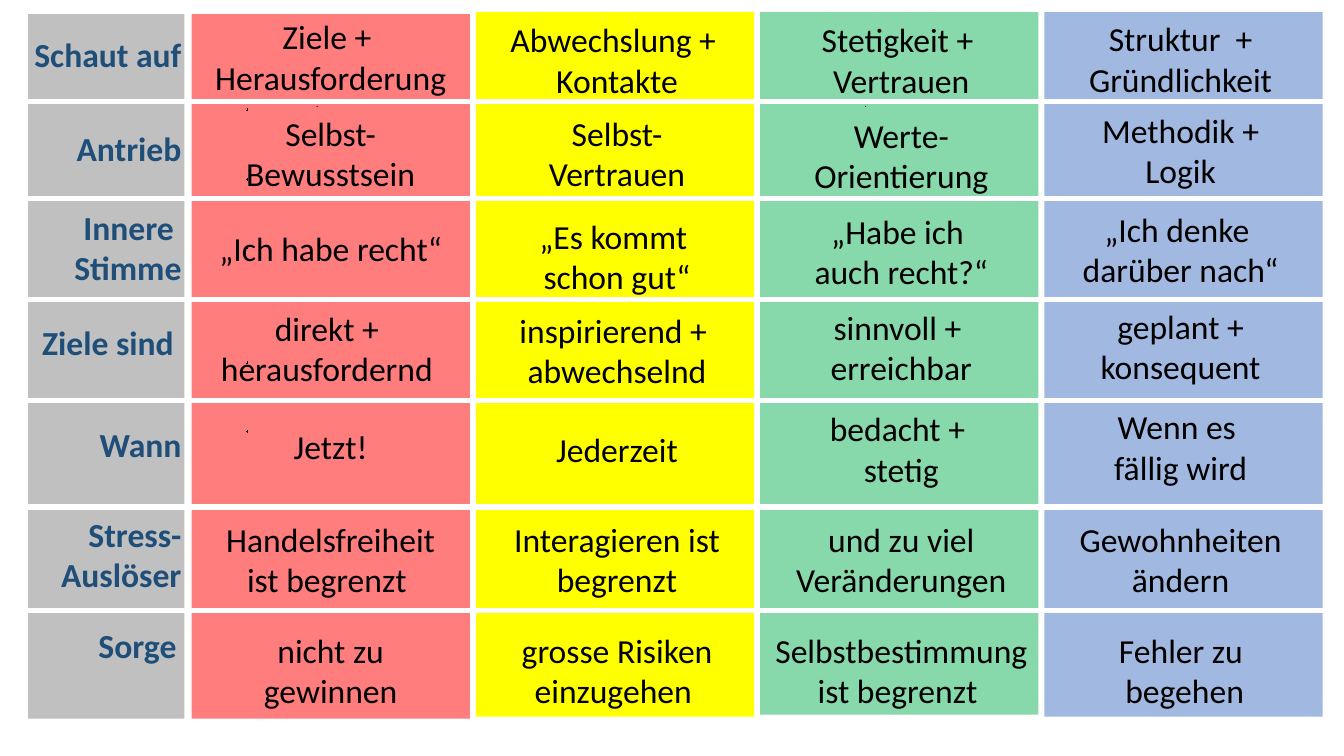
from lxml import etree
from pptx import Presentation
from pptx import util as u
from pptx.dml.color import RGBColor
from pptx.enum import shapes, text
from pptx.oxml.ns import qn

HUE = {"head": "C0C0C0", "red": "FF0000", "gold": "FFFF00", "green": "00B050",
       "blue": "4472C4", "ink": "000000", "navy": "1F4E79", "rule": "FFFFFF"}
LEFT, STEP, WIDE = 1.9, 2.82, 2.76
EDGE = 1.8
LINE = 0.4
COLS = [("red", 51, 0.14, 6.99), ("gold", None, 0.12, 6.99),
        ("green", 47, 0.12, 6.97), ("blue", 50, 0.12, 6.99)]
SPAN = [2.56, 2.72, 2.56, 2.76]
MID = [3.28, 6.12, 8.94, 11.71]
TOPS = [0.12, 1.01, 1.97, 2.97, 3.97, 5.03, 6.06]
RULES = [0.16, 0.2, 0.24, 0.16, 0.09, 0.24]
TICKS = [1.09, 1.78, 2.46, 3.6, 4.28]
DOTS = [(x, y) for x in (3.14, 8.58) for y in (1.05, 1.73)]
DOTS += [(2.45, y) for y in TICKS[2:]]

ROWS = [
    (("Schaut auf", 0.22, 1.64), [
        ("Ziele + \vHerausforderung", 0.04, 2.32),
        ("Abwechslung + \nKontakte", 0.07),
        ("Stetigkeit + \vVertrauen", 0.07),
        ("Struktur  +\nGründlichkeit", 0.06)]),
    (("Antrieb", 0.26, 1.8), [
        ("Selbst-\nBewusstsein", 0.11),
        ("Selbst-\vVertrauen", 0.11),
        ("Werte-\vOrientierung", 0.13),
        ("Methodik +\nLogik", 0.08)]),
    (("Innere \nStimme", 0.08, 1.78), [
        ("„Ich habe recht“", 0.29, 2.22),
        ("„Es kommt \nschon gut“", 0.17),
        ("„Habe ich \nauch recht?“", 0.12),
        ("„Ich denke \ndarüber nach“", 0.1, 1.96)]),
    (("Ziele sind ", 0.22, 1.5), [
        ("direkt + \nherausfordernd ", 0.08),
        ("inspirierend + \nabwechselnd", 0.1),
        ("sinnvoll + \nerreichbar", 0.07),
        ("geplant +\nkonsequent", 0.06, 1.6)]),
    (("Wann", 0.24, 1.79), [
        ("Jetzt!", 0.26),
        ("Jederzeit", 0.29),
        ("bedacht + \vstetig", 0.08),
        ("Wenn es \nfällig wird", 0.06)]),
    (("Stress-\vAuslöser", 0.07, 1.71), [
        ("Handelsfreiheit ist begrenzt ", 0.07),
        ("Interagieren ist begrenzt", 0.07),
        ("und zu viel\nVeränderungen", 0.07),
        ("Gewohnheiten ändern", 0.07)]),
    (("Sorge", 0.14, 1.71), [
        ("nicht zu gewinnen", 0.14),
        ("grosse Risiken einzugehen ", 0.14),
        ("Selbstbestimmung\nist begrenzt ", 0.14, 2.77),
        ("Fehler zu \vbegehen", 0.14)]),
]


def block(slide, x, y, w, h, hue, alpha=None):
    box = slide.shapes.add_shape(shapes.MSO_SHAPE.RECTANGLE,
                                 *map(u.Inches, (x, y, w, h)))
    box.shadow.inherit = False
    box.line.fill.background()
    box.fill.solid()
    box.fill.fore_color.rgb = RGBColor.from_string(HUE[hue])
    if alpha:
        tint = box.fill._xPr.find(".//" + qn("a:srgbClr"))
        etree.SubElement(tint, qn("a:alpha"), val=str(alpha * 1000))


def rule(slide, x, y, x2, y2, hue, size):
    bar = slide.shapes.add_connector(shapes.MSO_CONNECTOR.STRAIGHT,
                                     *map(u.Inches, (x, y, x2, y2)))
    bar.line.color.rgb = RGBColor.from_string(HUE[hue])
    bar.line.width = u.Pt(size)
    etree.SubElement(bar._element.spPr, qn("a:effectLst"))


def write(slide, words, x, y, w, h, hue="ink", bold=False, align="CENTER",
          pad=(0, 0), wrap=True):
    box = slide.shapes.add_textbox(*map(u.Inches, (x, y, w, h)))
    frame = box.text_frame
    frame.word_wrap = wrap
    frame.margin_left = frame.margin_right = u.Inches(pad[0])
    frame.margin_top = frame.margin_bottom = u.Inches(pad[1])
    frame.text = words
    for para in frame.paragraphs:
        para.alignment = text.PP_ALIGN[align]
        for run in para.runs:
            run.font.name = "Calibri"
            run.font.size = u.Pt(24)
            run.font.bold = bold
            run.font.color.rgb = RGBColor.from_string(HUE[hue])


def label(slide, top, words, drop, wide):
    edge = EDGE - 0.05 if words == "Sorge" else EDGE
    tall = LINE * (1 + words.count("\n") + words.count("\v"))
    write(slide, words, edge - wide, top + drop, wide, tall,
          hue="navy", bold=True, align="RIGHT")


def cell(slide, row, col, words, drop, wide=None):
    padded = row > 4
    mid = MID[col] + (0.04 if (row, col) == (6, 3) else 0)
    wide = wide or SPAN[col]
    tall = 0.91 if padded else 0.81 if "\n" in words or "\v" in words else LINE
    write(slide, words, mid - wide / 2, TOPS[row] + drop, wide, tall,
          pad=(0.1, 0.05) if padded else (0, 0), wrap=padded)


def main():
    deck = Presentation()
    deck.slide_width, deck.slide_height = u.Inches(13.33), u.Inches(7.5)
    slide = deck.slides.add_slide(deck.slide_layouts[6])
    block(slide, 0.28, 0.14, 1.55, 6.99, "head")
    for i, (hue, alpha, top, tall) in enumerate(COLS):
        block(slide, LEFT + i * STEP, top, WIDE, tall, hue, alpha)
    for x, y in DOTS:
        block(slide, x, y, 0.01, 0.01, "ink")
    for y in TICKS:
        rule(slide, 2.45, y, 2.46, y, "ink", 0)
        rule(slide, 2.45, y, 2.45, y + 0.01, "ink", 0)
    for x, y in zip(RULES, TOPS[1:]):
        rule(slide, x, y, x + 13.17, y, "rule", 3.75)
    for row, (head, cells) in enumerate(ROWS):
        label(slide, TOPS[row], *head)
        for col, item in enumerate(cells):
            cell(slide, row, col, *item)
    deck.save("out.pptx")


if __name__ == "__main__":
    main()
